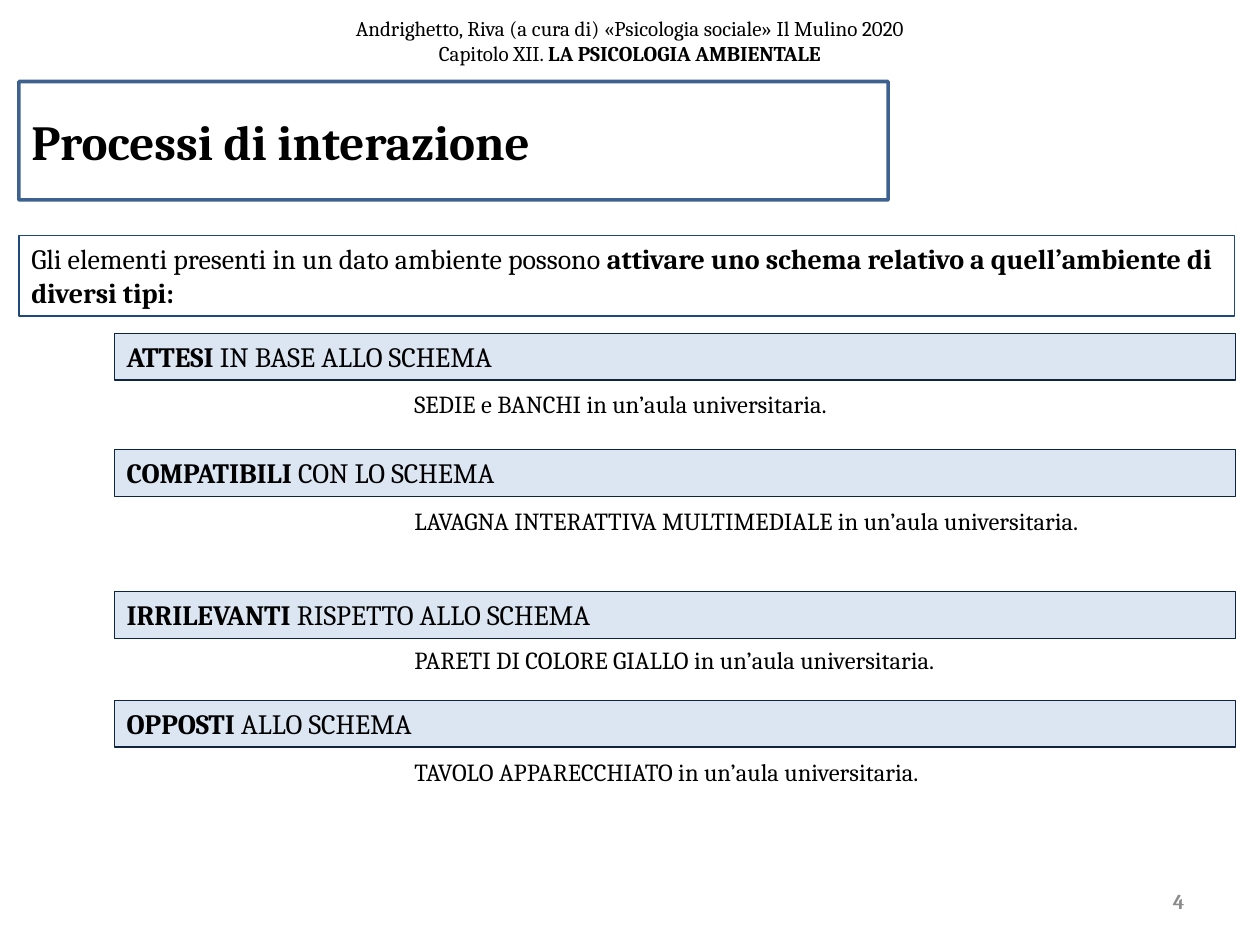
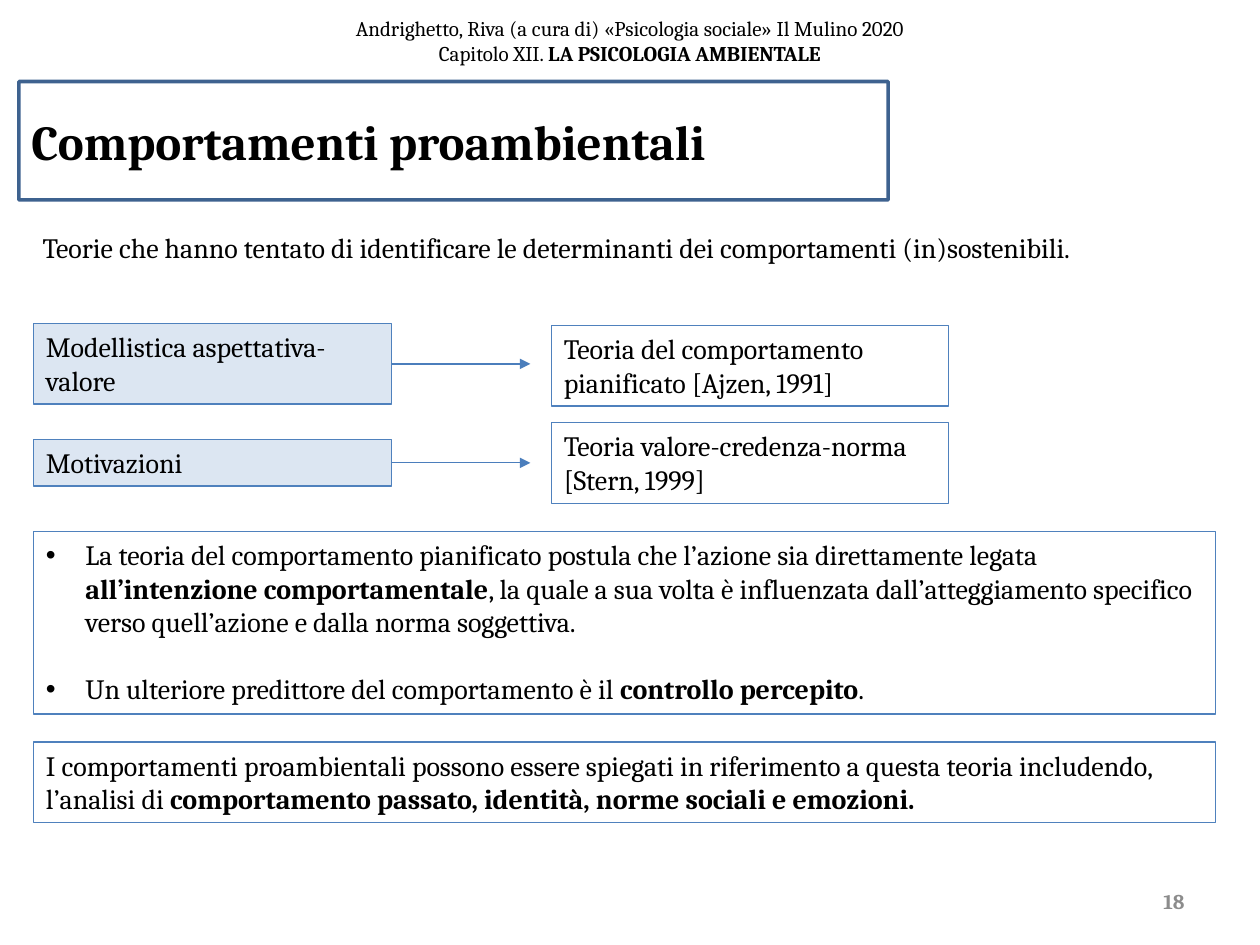
import pptx
import pptx.util
import pptx.dml.color
import pptx.enum.shapes
import pptx.enum.text
import pptx.oxml.ns
from lxml import etree

Pt = pptx.util.Pt
qn = pptx.oxml.ns.qn
ALIGN = pptx.enum.text.PP_ALIGN
ANCHOR = pptx.enum.text.MSO_ANCHOR
FIT = pptx.enum.text.MSO_AUTO_SIZE

# Shared look
FONT = "Cambria"
BLACK, GREY, WHITE = "000000", "8C8C8C", "FFFFFF"
NAVY, DARK, BLUE, ARROW = "1F497D", "0F243E", "4F81BD", "4B7EBC"
PALE = "DCE6F2"
BODY = 16
LINE_GAP = 19.2    # one line of body text
ROW, PAIR = 26.6, 46.1    # height of a box with one or two lines
HEADER = ["Andrighetto, Riva (a cura di) «Psicologia sociale» Il Mulino 2020",
          "Capitolo XII. **LA PSICOLOGIA AMBIENTALE**"]


def paint(target, color):
    """Give a fill or a line colour object a hex colour."""
    target.rgb = pptx.dml.color.RGBColor.from_string(color)


def add_bullet(para):
    props = para._p.get_or_add_pPr()
    props.set("marL", str(Pt(22.5)))
    props.set("indent", str(-Pt(22.5)))
    etree.SubElement(props, qn("a:buFont"), typeface="Arial")
    etree.SubElement(props, qn("a:buChar"), char="•")


def write(shape, lines, size=BODY, color=BLACK, align=ALIGN.LEFT,
          anchor=ANCHOR.TOP, bullet=False, gap=0):
    """Fill a shape with paragraphs; **marks** enclose bold words."""
    frame = shape.text_frame
    frame.word_wrap = True
    frame.vertical_anchor = anchor
    frame.auto_size = FIT.SHAPE_TO_FIT_TEXT if anchor == ANCHOR.TOP else FIT.NONE
    for i, line in enumerate(lines):
        para = frame.add_paragraph() if i else frame.paragraphs[0]
        para.alignment = align
        if i and gap:
            para.space_before = Pt(gap)
        if bullet:
            add_bullet(para)
        for j, part in enumerate(line.split("**")):
            if part:
                run = para.add_run()
                run.text = part
                run.font.name, run.font.size = FONT, Pt(size)
                run.font.bold = j % 2 == 1
                paint(run.font.color, color)


def add_label(slide, area, lines, **style):
    box = slide.shapes.add_textbox(*map(Pt, area))
    write(box, lines, **style)


def add_box(slide, area, lines, line=BLUE, fill=None, width=0.75, **style):
    box = slide.shapes.add_shape(
        pptx.enum.shapes.MSO_SHAPE.RECTANGLE, *map(Pt, area))
    box.shadow.inherit = False
    if fill:
        box.fill.solid()
        paint(box.fill.fore_color, fill)
    else:
        box.fill.background()
    box.line.width = Pt(width)
    box.line.fill.solid()
    paint(box.line.color, line)
    write(box, lines, **style)
    return box


def add_arrow(slide, box, end):
    """Draw a level arrow from the right side of a box."""
    mid = box.top + box.height // 2
    arrow = slide.shapes.add_connector(
        pptx.enum.shapes.MSO_CONNECTOR.STRAIGHT,
        box.left + box.width, mid, Pt(end), mid)
    arrow.begin_connect(box, 3)
    arrow.line.width = Pt(0.75)
    paint(arrow.line.color, ARROW)
    props = arrow._element.spPr
    etree.SubElement(props.find(qn("a:ln")), qn("a:tailEnd"), type="triangle")
    etree.SubElement(props, qn("a:effectLst"))


def add_page(deck, title, number):
    """Start a slide with its header, page number and framed title."""
    slide = deck.slides.add_slide(deck.slide_layouts[6])
    add_label(slide, (0, -7.9, 720, 62.6), HEADER, size=12,
              align=ALIGN.CENTER, anchor=ANCHOR.MIDDLE)
    add_label(slide, (516, 500.4, 168, 28.8), [f"**{number}**"], size=12,
              color=GREY, align=ALIGN.RIGHT, anchor=ANCHOR.MIDDLE)
    frame = add_box(slide, (10.8, 46.6, 496.8, 67.7), [f"**{title}**"],
                    line=NAVY, width=2, size=28, anchor=ANCHOR.MIDDLE)
    tint = frame.line._ln.find(".//" + qn("a:srgbClr"))
    etree.SubElement(tint, qn("a:alpha"), val="86000")
    return slide


def add_schema(deck):
    slide = add_page(deck, "Processi di interazione", 4)
    add_box(slide, (10.8, 134.6, 694.8, PAIR),
            ["Gli elementi presenti in un dato ambiente possono **attivare "
             "uno schema relativo a quell’ambiente di diversi tipi:**"],
            line=NAVY)
    # Kinds of element: bar top, heading, example top, example
    kinds = [
        (190.6, "**ATTESI **IN BASE ALLO SCHEMA", 219, "SEDIE e BANCHI"),
        (257, "**COMPATIBILI **CON LO SCHEMA", 285.6,
         "LAVAGNA INTERATTIVA MULTIMEDIALE"),
        (338.2, "**IRRILEVANTI **RISPETTO ALLO SCHEMA", 365,
         "PARETI DI COLORE GIALLO"),
        (400.3, "**OPPOSTI **ALLO SCHEMA", 429, "TAVOLO APPARECCHIATO"),
    ]
    for top, head, low, item in kinds:
        add_box(slide, (65.3, top, 640.8, ROW), [head], line=DARK, fill=PALE)
        add_label(slide, (229.7, low, 454.3, 24.2),
                  [f"{item} in un’aula universitaria."], size=14)


def add_theory(deck):
    slide = add_page(deck, "Comportamenti proambientali", 18)
    add_label(slide, (17.3, 128.2, 666.7, ROW),
              ["Teorie che hanno tentato di identificare le determinanti dei "
               "comportamenti (in)sostenibili."])
    # Each model points to its theory
    pairs = [
        (184.9, PAIR, "Modellistica aspettativa-valore",
         185.9, "Teoria del comportamento pianificato [Ajzen, 1991]"),
        (251.2, ROW, "Motivazioni",
         241.6, "Teoria valore-credenza-norma [Stern, 1999]"),
    ]
    for top, high, model, side, theory in pairs:
        box = add_box(slide, (19.2, top, 204.7, high), [model], fill=PALE)
        add_arrow(slide, box, 303.1)
        add_box(slide, (315.1, side, 227, PAIR), [theory], fill=WHITE)
    # Details
    add_box(slide, (19.2, 303.7, 675.4, 104.4), [
        "La teoria del comportamento pianificato postula che l’azione sia "
        "direttamente legata **all’intenzione comportamentale**, la quale a "
        "sua volta è influenzata dall’atteggiamento specifico verso "
        "quell’azione e dalla norma soggettiva.",
        "Un ulteriore predittore del comportamento è il "
        "**controllo percepito**."], bullet=True, gap=LINE_GAP)
    add_box(slide, (19.2, 424.1, 675.4, PAIR), [
        "I comportamenti proambientali possono essere spiegati in riferimento "
        "a questa teoria includendo, l’analisi di **comportamento passato, "
        "identità, norme sociali e emozioni.**"], fill=WHITE)


def main():
    deck = pptx.Presentation()
    deck.slide_width, deck.slide_height = Pt(720), Pt(540)
    add_schema(deck)
    add_theory(deck)
    deck.save("out.pptx")


if __name__ == "__main__":
    main()
